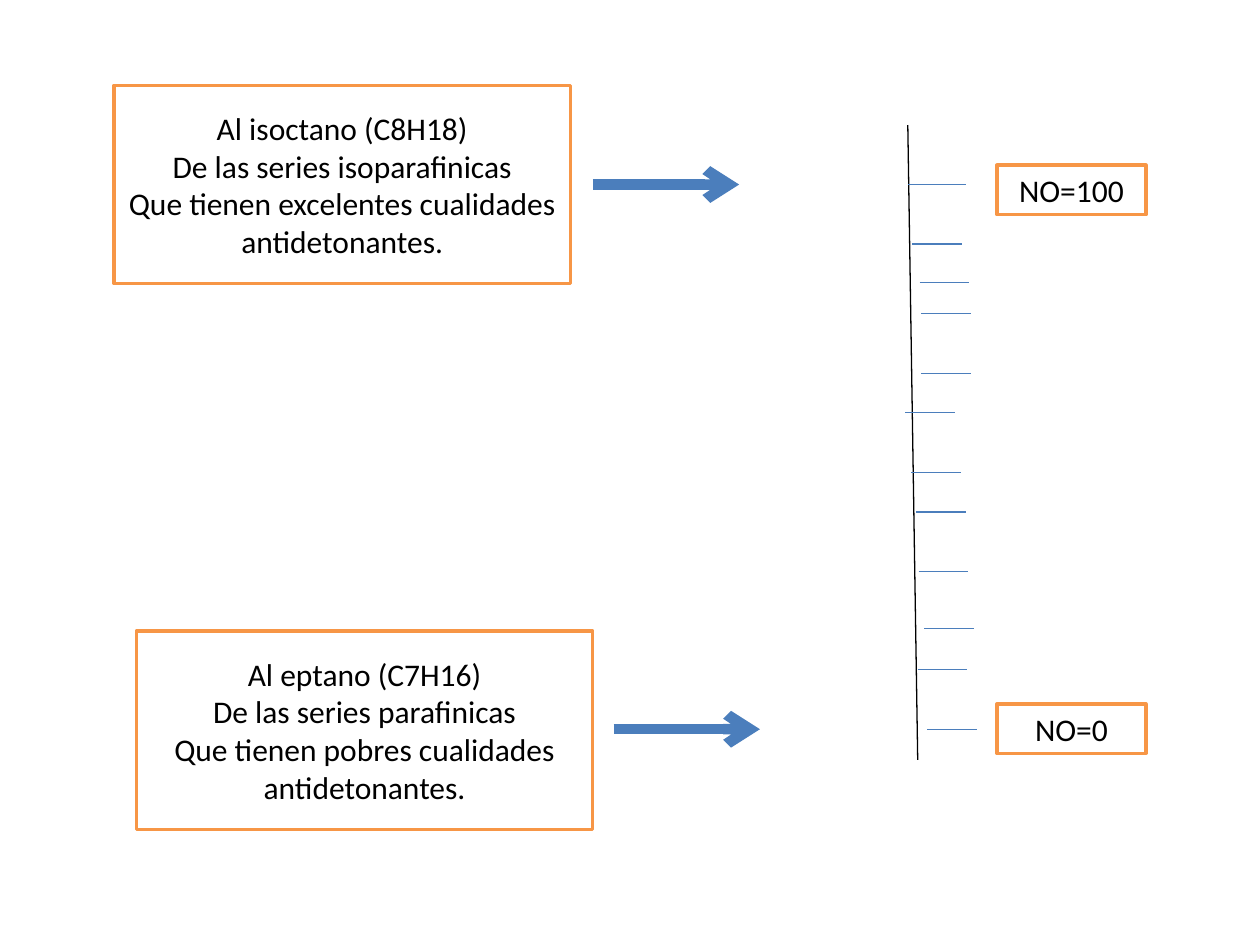
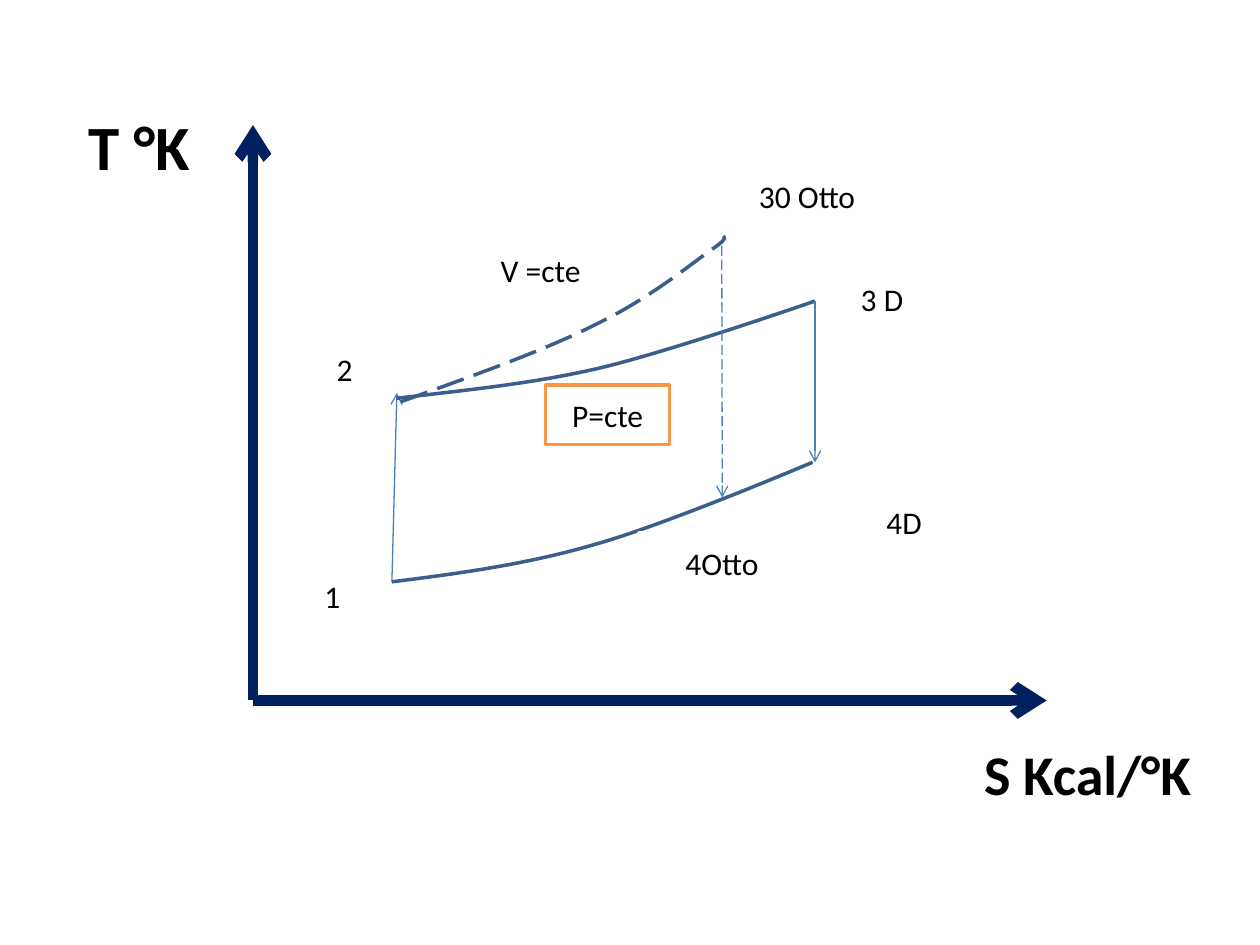
from lxml.etree import SubElement
from pptx import Presentation
from pptx.dml.color import RGBColor
from pptx.enum.dml import MSO_LINE
from pptx.enum.shapes import MSO_CONNECTOR, MSO_SHAPE
from pptx.enum.text import MSO_ANCHOR, PP_ALIGN
from pptx.oxml.ns import qn
from pptx.util import Cm, Pt

FONT = "Calibri"
BLACK = RGBColor(0x00, 0x00, 0x00)
WHITE = RGBColor(0xFF, 0xFF, 0xFF)
ORANGE = RGBColor(0xF7, 0x96, 0x46)
BLUE = RGBColor(0x4B, 0x7E, 0xBC)
CURVE_BLUE = RGBColor(0x3A, 0x5F, 0x8C)
NAVY = RGBColor(0x00, 0x20, 0x60)

FUELS = [
    (2.3, 1.72, ["Al isoctano (C8H18)", "De las series isoparafinicas",
                 "Que tienen excelentes cualidades antidetonantes."]),
    (2.75, 12.72, ["Al eptano (C7H16)", "De las series parafinicas",
                   "Que tienen pobres cualidades antidetonantes."]),
]
FUEL_ARROWS = [((11.95, 3.72), (14.9, 3.72)), ((12.37, 14.7), (15.32, 14.7))]
TICK_LENGTH = 1
TICKS = [
    (18.3, 3.72), (18.39, 4.92), (18.47, 3.72), (18.54, 5.69), (18.57, 6.32),
    (18.57, 7.53), (18.25, 8.32), (18.37, 9.52), (18.47, 10.32), (18.52, 11.52),
    (18.63, 12.67), (18.5, 13.49), (18.69, 14.7),
]
OCTANE_NUMBERS = [("NO=100", 3.33), ("NO=0", 14.19)]

ORIGIN = (5.1, 14.12)
AXIS_ENDS = [(21.1, 14.12), (5.1, 2.52)]
PRESSURE_CURVE = [
    (8, 8.03), (9.32, 7.87), (10.67, 7.75), (12.09, 7.42),
    (13.49, 7.09), (16.43, 6.07), (16.43, 6.07),
]
EXHAUST_CURVE = [
    (7.9, 11.73), (9.25, 11.56), (10.62, 11.38), (12.01, 10.97),
    (13.44, 10.57), (16.38, 9.32), (16.38, 9.32),
]
VOLUME_CURVE = [
    (8.08, 8.1), (9.55, 7.57), (11.05, 7.04), (12.09, 6.5), (13.13, 5.99),
    (13.92, 5.33), (14.35, 5.03), (14.76, 4.75), (14.55, 4.78), (14.58, 4.76),
]
STATE_LABELS = [
    ("1", 6.1, 11.41, 1.2, 1.2),
    ("4D", 16.55, 9.93, 3.35, 1.2),
    ("3 D", 16.66, 5.23, 2.24, 1.6),
    ("2", 6.35, 6.83, 1.2, 1.2),
    ("V =cte", 9.65, 4.85, 2.5, 1.2),
]
OTTO_LABELS = [("30 Otto", 14.76, 3.15, 3.02, 1.6), ("4Otto", 12.88, 10.74, 3.35, 1.2)]


def add_span(para, text, size=18, bold=False):
    """Append one formatted run to a paragraph."""
    span = para.add_run()
    span.text = text
    span.font.name = FONT
    span.font.size = Pt(size)
    span.font.bold = bold
    span.font.color.rgb = BLACK


def add_box(page, left, top, width, height, lines, border=WHITE, size=18, bold=False):
    """Add a white bordered box with centred lines and return its last paragraph."""
    box = page.shapes.add_shape(
        MSO_SHAPE.RECTANGLE, Cm(left), Cm(top), Cm(width), Cm(height))
    box.shadow.inherit = False
    box.fill.solid()
    box.fill.fore_color.rgb = WHITE
    box.line.color.rgb = border
    box.line.width = Pt(2)
    frame = box.text_frame
    frame.word_wrap = True
    frame.vertical_anchor = MSO_ANCHOR.MIDDLE
    for index, text in enumerate(lines):
        para = frame.add_paragraph() if index else frame.paragraphs[0]
        para.alignment = PP_ALIGN.CENTER
        add_span(para, text, size, bold)
    return para


def add_line(page, start, end, color=BLUE, width=0.75, arrow=False, dashed=False):
    """Add a straight line, with an open arrowhead at its end if asked."""
    line = page.shapes.add_connector(
        MSO_CONNECTOR.STRAIGHT, *(Cm(value) for value in (*start, *end)))
    line.line.color.rgb = color
    line.line.width = Pt(width)
    if dashed:
        line.line.dash_style = MSO_LINE.LONG_DASH
    if arrow:
        SubElement(line.line._get_or_add_ln(), qn("a:tailEnd"), type="arrow")
    SubElement(line._element.spPr, qn("a:effectLst"))


def bend_segments(curve):
    """Turn every three straight segments of an outline into one cubic curve."""
    outline = next(curve._element.iter(qn("a:path")))
    segments = outline.findall(qn("a:lnTo"))
    for first in range(0, len(segments), 3):
        cubic = SubElement(outline, qn("a:cubicBezTo"))
        for segment in segments[first:first + 3]:
            cubic.append(segment[0])
            outline.remove(segment)


def add_curve(page, points, dashed=False):
    """Add an open outline through a chain of cubic curves."""
    start, *controls = [(Cm(left), Cm(top)) for left, top in points]
    builder = page.shapes.build_freeform(*start)
    builder.add_line_segments(controls, close=False)
    curve = builder.convert_to_shape()
    bend_segments(curve)
    curve.shadow.inherit = False
    curve.fill.background()
    curve.line.color.rgb = CURVE_BLUE
    curve.line.width = Pt(2)
    if dashed:
        curve.line.dash_style = MSO_LINE.LONG_DASH


def add_labels(page, labels):
    """Add plain one-line labels."""
    for text, *place in labels:
        add_box(page, *place, [text])


def build_octane_scale(page):
    """Show the two reference fuels beside the octane scale."""
    for left, top, lines in FUELS:
        add_box(page, left, top, 9.2, 4, lines, ORANGE)
    for start, end in FUEL_ARROWS:
        add_line(page, start, end, width=6, arrow=True)
    add_line(page, (18.3, 2.52), (18.5, 15.32), BLACK)
    for left, top in TICKS:
        add_line(page, (left, top), (left + TICK_LENGTH, top))
    for text, top in OCTANE_NUMBERS:
        add_box(page, 20.1, top, 3, 1, [text], ORANGE)


def build_cycle_diagram(page):
    """Draw the Otto and Diesel cycles on temperature and entropy axes."""
    for end in AXIS_ENDS:
        add_line(page, ORIGIN, end, NAVY, 6, arrow=True)
    add_line(page, (7.9, 11.73), (8, 7.92), arrow=True)
    add_curve(page, PRESSURE_CURVE)
    add_line(page, (16.43, 6.07), (16.43, 9.32), arrow=True)
    add_curve(page, EXHAUST_CURVE)
    add_box(page, 11, 7.76, 2.5, 1.2, ["P=cte"], ORANGE)
    add_labels(page, STATE_LABELS)
    add_curve(page, VOLUME_CURVE, dashed=True)
    add_line(page, (14.55, 4.95), (14.56, 10.03), arrow=True, dashed=True)
    add_labels(page, OTTO_LABELS)
    add_box(page, 1.3, 1.92, 3, 2.03, ["T °K"], size=36, bold=True)
    entropy = add_box(page, 19.5, 14.58, 5, 2.03, ["S Kcal/°K"], size=32, bold=True)
    add_span(entropy, " ")


def main():
    """Build and save the deck."""
    deck = Presentation()
    deck.slide_width, deck.slide_height = Cm(25.4), Cm(19.05)
    for build in (build_octane_scale, build_cycle_diagram):
        build(deck.slides.add_slide(deck.slide_layouts[6]))
    deck.save("out.pptx")


if __name__ == "__main__":
    main()
